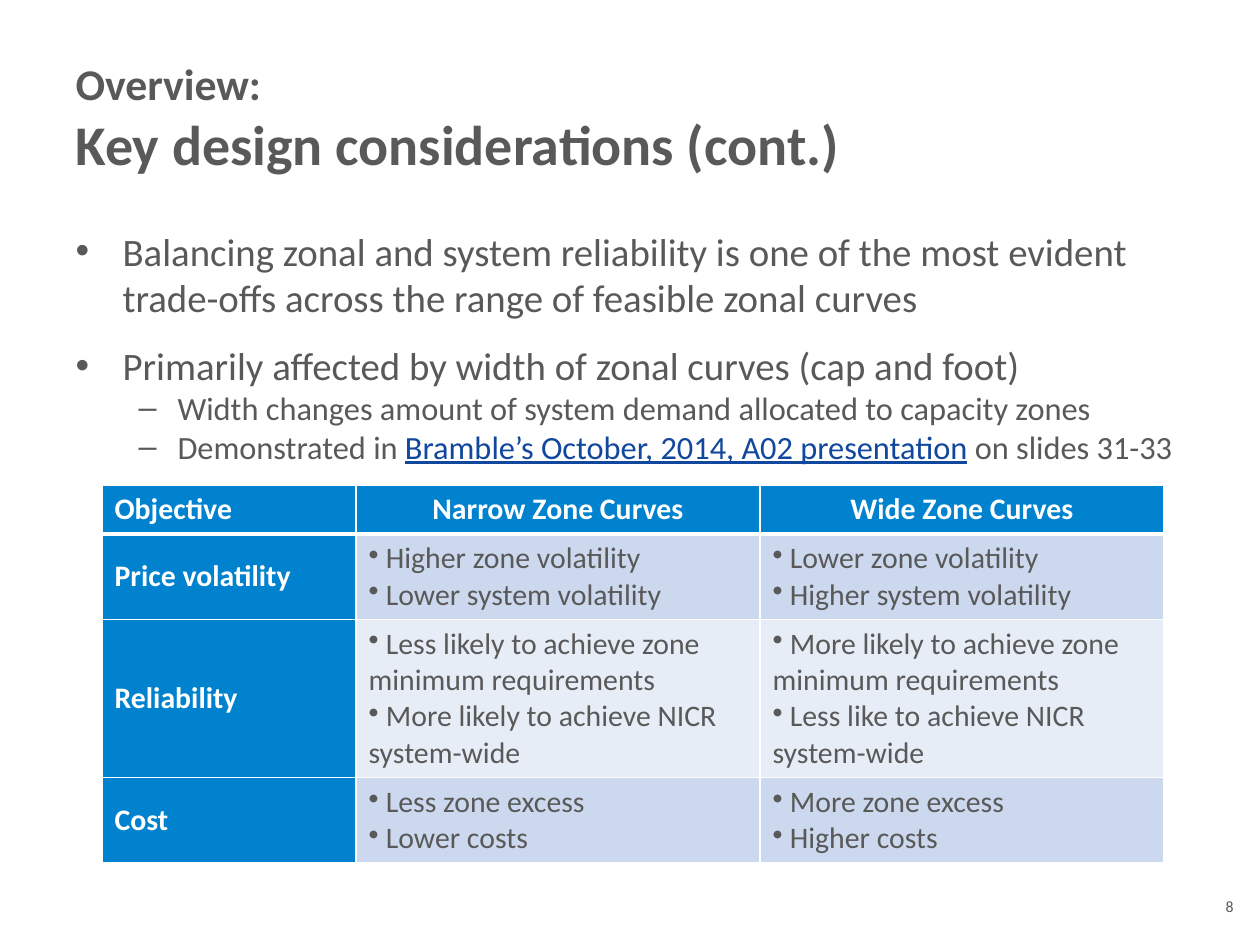
from dataclasses import dataclass
from typing import Any

from lxml.etree import SubElement
from pptx import Presentation
from pptx.dml.color import RGBColor
from pptx.enum.text import MSO_ANCHOR, MSO_AUTO_SIZE, PP_ALIGN
from pptx.oxml import parse_xml
from pptx.oxml.ns import nsdecls, qn
from pptx.util import Emu, Pt

PIXEL = 914400 / 126
GREY, WHITE, BLUE, LINK = "595959", "FFFFFF", "0082CF", "11479D"
BANDS = ("CCD8ED", "E7EDF6")


@dataclass
class Run:
    text: str
    size: float
    color: str = GREY
    bold: bool = False
    underline: bool = False


@dataclass
class Line:
    runs: list[Run]
    bullet: str = ""
    level: int = 0
    margin: int = 0
    hanging: int = 0
    before: int = 0
    alignment: PP_ALIGN = PP_ALIGN.LEFT


@dataclass
class Objective:
    name: str
    narrow: list[str]
    wide: list[str]
    height: int


TITLE = [Line([Run("Overview:\v", 25, bold=True),
               Run("Key design considerations (cont.)", 32, bold=True)])]


def main_point(text: str, before: int) -> Line:
    return Line([Run(text, 22.2)], "•", 0, 47, 47, before)


def sub_point(*runs: Run) -> Line:
    return Line(list(runs), "–", 1, 102, 39)


BODY = [
    main_point("Balancing zonal and system reliability is one of the most evident "
               "trade-offs across the range of feasible zonal curves", 0),
    main_point("Primarily affected by width of zonal curves (cap and foot)", 12),
    sub_point(Run("Width changes amount of system demand allocated to capacity zones", 18.5)),
    sub_point(Run("Demonstrated in ", 18.5),
              Run("Bramble’s October, 2014, A02 presentation", 18.5, LINK, underline=True),
              Run(" on slides 31-33", 18.5)),
]

HEADERS = ("Objective", "Narrow Zone Curves", "Wide Zone Curves")
HEADER_HEIGHT = 49
COLUMN_WIDTHS = (254, 404, 404)
OBJECTIVES = [
    Objective("Price volatility",
              ["Higher zone volatility", "Lower system volatility"],
              ["Lower zone volatility", "Higher system volatility"], 85),
    Objective("Reliability",
              ["Less likely to achieve zone minimum requirements",
               "More likely to achieve NICR system-wide"],
              ["More likely to achieve zone minimum requirements",
               "Less like to achieve NICR system-wide"], 158),
    Objective("Cost",
              ["Less zone excess", "Lower costs"],
              ["More zone excess", "Higher costs"], 85),
]


def px(value: int) -> Emu:
    return Emu(round(value * PIXEL))


def color(value: str) -> RGBColor:
    return RGBColor.from_string(value)


def apply(target: Any, values: dict[str, Any]) -> None:
    for name, value in values.items():
        setattr(target, name, value)


def place(shape: Any, left: int, top: int, width: int, height: int) -> None:
    apply(shape, {"left": px(left), "top": px(top),
                  "width": px(width), "height": px(height)})


def write(frame: Any, lines: list[Line]) -> None:
    for index, line in enumerate(lines):
        paragraph = frame.add_paragraph() if index else frame.paragraphs[0]
        properties = paragraph._p.get_or_add_pPr()
        properties.set("marL", str(px(line.margin)))
        properties.set("indent", str(-px(line.hanging)))
        if line.bullet:
            SubElement(properties, qn("a:buChar")).set("char", line.bullet)
        apply(paragraph, {"level": line.level, "alignment": line.alignment,
                          "space_before": Pt(line.before), "space_after": Pt(0)})
        for item in line.runs:
            text, separator, _ = item.text.partition("\v")
            run = paragraph.add_run()
            run.text = text
            apply(run.font, {"name": "Calibri", "size": Pt(item.size),
                             "bold": item.bold, "underline": item.underline})
            run.font.color.rgb = color(item.color)
            if separator:
                paragraph.add_line_break()


def fill_cell(cell: Any, lines: list[Line], fill: str, top: int, bottom: int) -> None:
    cell.vertical_anchor = MSO_ANCHOR.MIDDLE
    cell.fill.solid()
    cell.fill.fore_color.rgb = color(fill)
    write(cell.text_frame, lines)
    borders = {"lnL": 1, "lnR": 1, "lnT": top, "lnB": bottom}
    for index, (side, width) in enumerate(borders.items()):
        cell._tc.get_or_add_tcPr().insert(index, parse_xml(
            f'<a:{side} {nsdecls("a")} w="{Pt(width)}"><a:solidFill>'
            f'<a:srgbClr val="{WHITE}"/></a:solidFill></a:{side}>'))


def label(text: str, alignment: PP_ALIGN = PP_ALIGN.LEFT) -> list[Line]:
    return [Line([Run(text, 17, WHITE, bold=True)], alignment=alignment)]


def bullets(texts: list[str]) -> list[Line]:
    return [Line([Run(f" {text}", 17)], "•") for text in texts]


def add_objectives(slide: Any) -> None:
    heights = [HEADER_HEIGHT] + [objective.height for objective in OBJECTIVES]
    table = slide.shapes.add_table(
        len(heights), len(HEADERS), px(102), px(485),
        px(sum(COLUMN_WIDTHS)), px(sum(heights))).table
    for column, width in zip(table.columns, COLUMN_WIDTHS):
        column.width = px(width)
    for row, height in zip(table.rows, heights):
        row.height = px(height)
    for index, header in enumerate(HEADERS):
        alignment = PP_ALIGN.CENTER if index else PP_ALIGN.LEFT
        fill_cell(table.cell(0, index), label(header, alignment), BLUE, 1, 3)
    for index, objective in enumerate(OBJECTIVES):
        band = BANDS[index % 2]
        contents = [(label(objective.name), BLUE), (bullets(objective.narrow), band),
                    (bullets(objective.wide), band)]
        for column, (lines, fill) in enumerate(contents):
            fill_cell(table.cell(index + 1, column), lines, fill, 1 if index else 3, 1)


def main() -> None:
    presentation = Presentation()
    apply(presentation, {"slide_width": px(1260), "slide_height": px(945)})
    slide = presentation.slides.add_slide(presentation.slide_layouts[1])
    title, body = slide.shapes.title, slide.placeholders[1]
    place(title, 63, 38, 1134, 158)
    place(body, 63, 221, 1134, 266)
    number = slide.shapes.add_textbox(px(1208), px(888), px(43), px(37))
    frames = [(title, TITLE, MSO_ANCHOR.MIDDLE), (body, BODY, MSO_ANCHOR.TOP),
              (number, [Line([Run("8", 9)], alignment=PP_ALIGN.CENTER)], MSO_ANCHOR.MIDDLE)]
    for shape, lines, anchor in frames:
        apply(shape.text_frame, {"word_wrap": True, "auto_size": MSO_AUTO_SIZE.NONE,
                                 "vertical_anchor": anchor})
        write(shape.text_frame, lines)
    apply(number.text_frame, dict.fromkeys(
        ("margin_left", "margin_top", "margin_right", "margin_bottom"), 0))
    add_objectives(slide)
    presentation.save("out.pptx")


if __name__ == "__main__":
    main()
